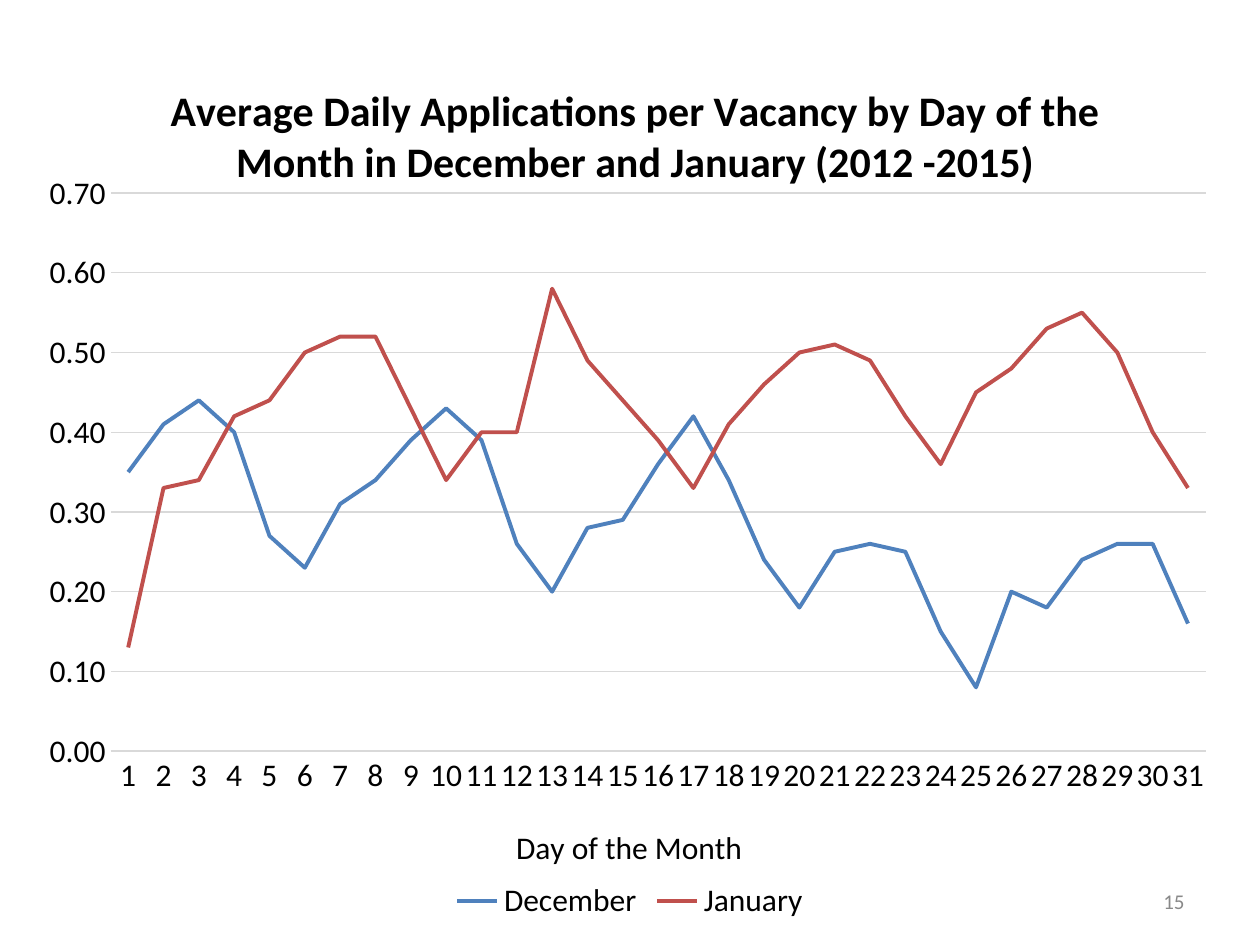
from dataclasses import dataclass

from lxml.etree import SubElement
from pptx import Presentation
from pptx.chart.data import CategoryChartData
from pptx.dml.color import RGBColor
from pptx.enum.chart import XL_CHART_TYPE as ChartType
from pptx.enum.chart import XL_LEGEND_POSITION as LegendPosition
from pptx.enum.chart import XL_TICK_MARK as TickMark
from pptx.enum.text import MSO_ANCHOR as Anchor
from pptx.enum.text import PP_ALIGN as Align
from pptx.oxml import parse_xml
from pptx.oxml.ns import nsdecls, qn
from pptx.util import Inches, Pt

DECEMBER = [0.35, 0.41, 0.44, 0.4, 0.27, 0.23, 0.31, 0.34, 0.39, 0.43, 0.39,
            0.26, 0.2, 0.28, 0.29, 0.36, 0.42, 0.34, 0.24, 0.18, 0.25, 0.26,
            0.25, 0.15, 0.08, 0.2, 0.18, 0.24, 0.26, 0.26, 0.16]
JANUARY = [0.13, 0.33, 0.34, 0.42, 0.44, 0.5, 0.52, 0.52, 0.43, 0.34, 0.4,
           0.4, 0.58, 0.49, 0.44, 0.39, 0.33, 0.41, 0.46, 0.5, 0.51, 0.49,
           0.42, 0.36, 0.45, 0.48, 0.53, 0.55, 0.5, 0.4, 0.33]


@dataclass(frozen=True)
class Theme:
    font: str = "Calibri"
    ink: str = "000000"
    muted: str = "898989"
    grid: str = "D9D9D9"
    series: tuple = ("4F81BD", "C0504D")
    title_size: float = 24
    body_size: float = 18
    small_size: float = 12
    hairline: float = 0.75
    curve: float = 2.25


class SlideBuilder:
    """Draws styled elements on one slide, placed by shares of its size."""

    def __init__(self, deck, theme):
        self.deck, self.theme = deck, theme
        self.page = deck.slides.add_slide(deck.slide_layouts[6])

    def frame(self, left, top, width, height):
        across, down = self.deck.slide_width, self.deck.slide_height
        return (int(left * across), int(top * down),
                int(width * across), int(height * down))

    def style_font(self, font, size, color, bold=False):
        font.name, font.size, font.bold = self.theme.font, Pt(size), bold
        font.color.rgb = RGBColor.from_string(color)

    def style_line(self, line, color, width):
        line.color.rgb = RGBColor.from_string(color)
        line.width = Pt(width)

    def place(self, parent, **shares):
        layout = parent.find(qn("c:layout"))
        if layout is None:
            layout = parse_xml(f"<c:layout {nsdecls('c')}/>")
            parent.insert(0, layout)
        manual = SubElement(layout, qn("c:manualLayout"))
        if "w" in shares:
            SubElement(manual, qn("c:layoutTarget")).set("val", "inner")
        for side in ("x", "y"):
            SubElement(manual, qn(f"c:{side}Mode")).set("val", "edge")
        for key, share in shares.items():
            SubElement(manual, qn(f"c:{key}")).set("val", str(share))

    def heading(self, title, text, size, bold, x, y):
        title.text_frame.text = text
        span = title.text_frame.paragraphs[0].runs[0]
        self.style_font(span.font, size, self.theme.ink, bold)
        self.place(title._element, x=x, y=y)

    def page_number(self, text, *shares):
        text_frame = self.page.shapes.add_textbox(*self.frame(*shares)).text_frame
        text_frame.word_wrap = True
        text_frame.vertical_anchor = Anchor.MIDDLE
        text_frame.text = text
        para = text_frame.paragraphs[0]
        para.alignment = Align.RIGHT
        self.style_font(para.runs[0].font, self.theme.small_size, self.theme.muted)

    def style_axis(self, axis):
        axis.major_tick_mark = axis.minor_tick_mark = TickMark.NONE
        self.style_font(axis.tick_labels.font, self.theme.body_size, self.theme.ink)

    def line_chart(self, title, axis_title, categories, series, *shares):
        theme = self.theme
        data = CategoryChartData(number_format="#,##0.00")
        data.categories = categories
        for name, values in series.items():
            data.add_series(name, values)
        chart = self.page.shapes.add_chart(
            ChartType.LINE, *self.frame(*shares), data).chart
        self.style_font(chart.font, theme.body_size, theme.ink)
        self.heading(chart.chart_title, title, theme.title_size, True, 0.11, 0.04)
        self.place(chart._chartSpace.chart.plotArea,
                   x=0.066, y=0.174, w=0.915, h=0.629)

        days, rates = chart.category_axis, chart.value_axis
        self.style_axis(days)
        self.style_axis(rates)
        days._element.find(qn("c:txPr")).find(qn("a:bodyPr")).set("rot", "-60000000")
        self.style_line(days.format.line, theme.grid, theme.hairline)
        self.heading(days.axis_title, axis_title, theme.body_size, False, 0.4, 0.88)
        rates.minimum_scale, rates.maximum_scale, rates.major_unit = 0, 0.7, 0.1
        rates.tick_labels.number_format = "#,##0.00"
        rates.tick_labels.number_format_is_linked = False
        rates.format.line.fill.background()
        self.style_line(rates.major_gridlines.format.line, theme.grid, theme.hairline)

        chart.has_legend = True
        chart.legend.position = LegendPosition.BOTTOM
        chart.legend.include_in_layout = False
        self.style_font(chart.legend.font, theme.body_size, theme.ink)
        plot = chart.plots[0]
        plot.vary_by_categories = False
        for curve, color in zip(plot.series, theme.series):
            curve.smooth = False
            self.style_line(curve.format.line, color, theme.curve)


def main():
    deck = Presentation()
    deck.slide_width, deck.slide_height = Inches(10), Inches(7.5)
    slide = SlideBuilder(deck, Theme())
    slide.page_number("15", 0.717, 0.927, 0.233, 0.053)
    slide.line_chart(
        "Average Daily Applications per Vacancy by Day of the Month "
        "in December and January (2012 -2015)",
        "Day of the Month",
        [str(day) for day in range(1, 32)],
        {"December": DECEMBER, "January": JANUARY},
        0.025, 0.041, 0.95, 0.939)
    deck.save("out.pptx")


if __name__ == "__main__":
    main()
